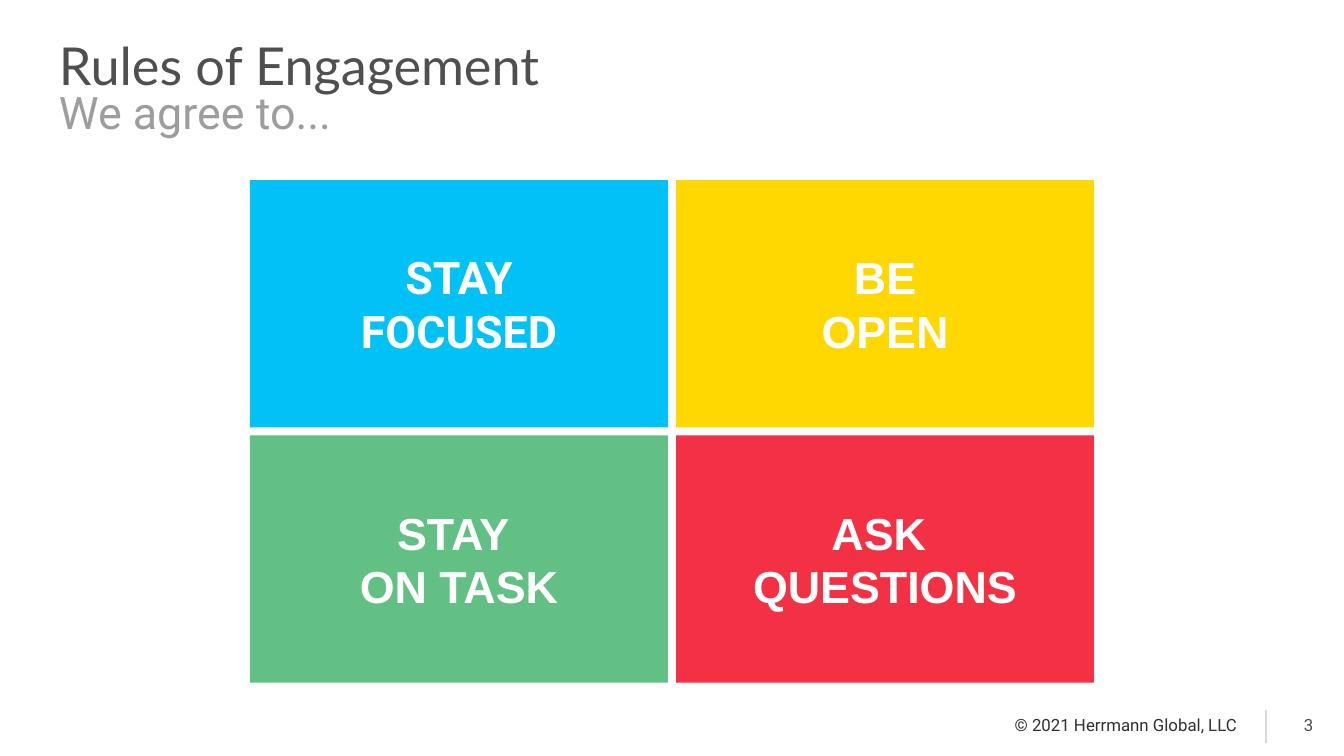
import dataclasses

import lxml.etree
import pptx
import pptx.dml.color
import pptx.enum.shapes
import pptx.enum.text
import pptx.oxml.ns
import pptx.util

Inches = pptx.util.Inches
Align = pptx.enum.text.PP_ALIGN
Anchor = pptx.enum.text.MSO_ANCHOR

LEFT, TOP = 1.86, 1.34
WIDTH, HEIGHT = 3.11, 1.84
GAP = 0.06


@dataclasses.dataclass
class Style:
    font: str
    size: int
    color: str
    bold: bool = False
    align: Align = Align.LEFT
    anchor: Anchor = Anchor.MIDDLE
    inset: float = 0.1


@dataclasses.dataclass
class Label:
    text: str
    box: tuple[float, float, float, float]
    style: Style


@dataclasses.dataclass
class Tile:
    text: str
    row: int
    col: int
    fill: str


def bold(font: str) -> Style:
    """Give the style of the words on a tile."""
    return Style(font, 24, "FFFFFF", bold=True, align=Align.CENTER, inset=0.07)


TILES = [
    Tile("", 0, 0, "02C1F4"),
    Tile("STAY \nON TASK", 1, 0, "63C084"),
    Tile("BE\nOPEN", 0, 1, "FFD701"),
    Tile("ASK \nQUESTIONS", 1, 1, "F43045"),
]

LABELS = [
    Label("© 2021 Herrmann Global, LLC", (7.48, 5.18, 1.87, 0.43),
          Style("Roboto", 9, "2F302F", inset=0.07)),
    Label("Rules of Engagement", (0.34, 0.15, 9.32, 0.63),
          Style("Lato", 28, "4E504F", anchor=Anchor.TOP)),
    Label("We agree to...", (0.34, 0.53, 9.32, 0.63),
          Style("Roboto", 24, "9D9D9D", anchor=Anchor.TOP)),
    Label("STAY\nFOCUSED", (LEFT, TOP, WIDTH, HEIGHT), bold("Roboto")),
    Label("3", (9.27, 5.18, 0.6, 0.43),
          Style("Roboto", 9, "4E504F", align=Align.RIGHT)),
]


def paint(target, color: str) -> None:
    """Set a solid colour on a fill."""
    target.solid()
    target.fore_color.rgb = pptx.dml.color.RGBColor.from_string(color)


def write(shape, text: str, style: Style) -> None:
    frame = shape.text_frame
    frame.text = text
    frame.word_wrap = True
    frame.vertical_anchor = style.anchor
    frame.margin_left = frame.margin_right = Inches(style.inset)
    frame.margin_top = frame.margin_bottom = Inches(style.inset)
    for line in frame.paragraphs:
        line.alignment = style.align
        for run in line.runs:
            run.font.name = style.font
            run.font.size = pptx.util.Pt(style.size)
            run.font.bold = style.bold
            paint(run.font.fill, style.color)


def add_label(slide, label: Label) -> None:
    box = slide.shapes.add_textbox(*map(Inches, label.box))
    write(box, label.text, label.style)


def add_tile(slide, tile: Tile) -> None:
    shape = slide.shapes.add_shape(
        pptx.enum.shapes.MSO_SHAPE.RECTANGLE,
        Inches(LEFT + tile.col * (WIDTH + GAP)),
        Inches(TOP + tile.row * (HEIGHT + GAP)),
        Inches(WIDTH), Inches(HEIGHT))
    shape.shadow.inherit = False
    paint(shape.fill, tile.fill)
    shape.line.fill.background()
    if tile.text:
        write(shape, tile.text, bold("Arial"))


def add_rule(slide) -> None:
    """Draw the thin line before the page number."""
    rule = slide.shapes.add_connector(
        pptx.enum.shapes.MSO_CONNECTOR.STRAIGHT,
        Inches(9.42), Inches(5.28), Inches(9.42), Inches(5.53))
    rule.line.width = pptx.util.Pt(1)
    paint(rule.line.fill, "D8D8D8")
    lxml.etree.SubElement(rule._element.spPr,
                          pptx.oxml.ns.qn("a:effectLst"))


def main() -> None:
    deck = pptx.Presentation()
    deck.slide_width = Inches(10)
    deck.slide_height = Inches(10 * 9 / 16)
    slide = deck.slides.add_slide(deck.slide_layouts[6])
    add_rule(slide)
    for tile in TILES:
        add_tile(slide, tile)
    for label in LABELS:
        add_label(slide, label)
    deck.save("out.pptx")


if __name__ == "__main__":
    main()
